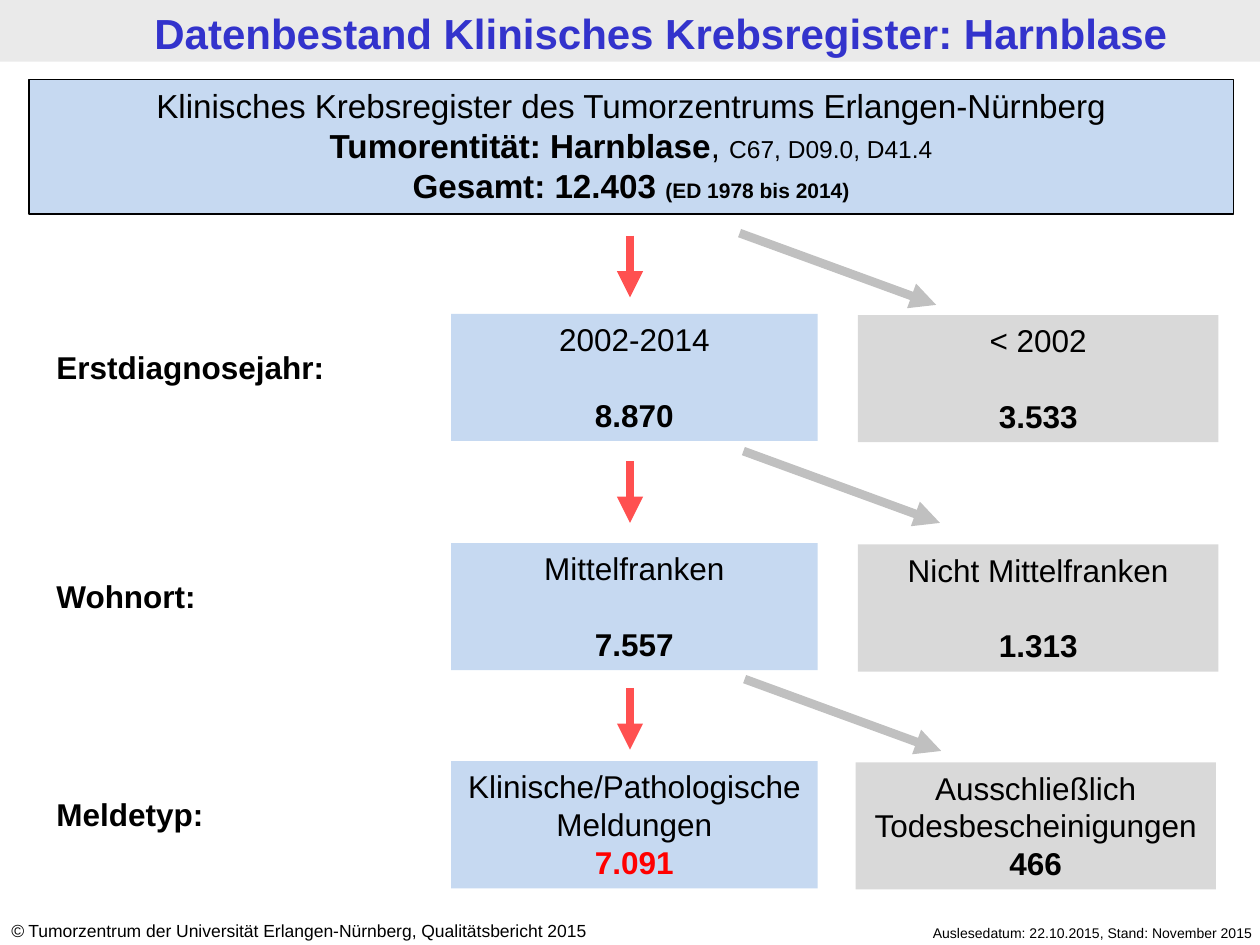
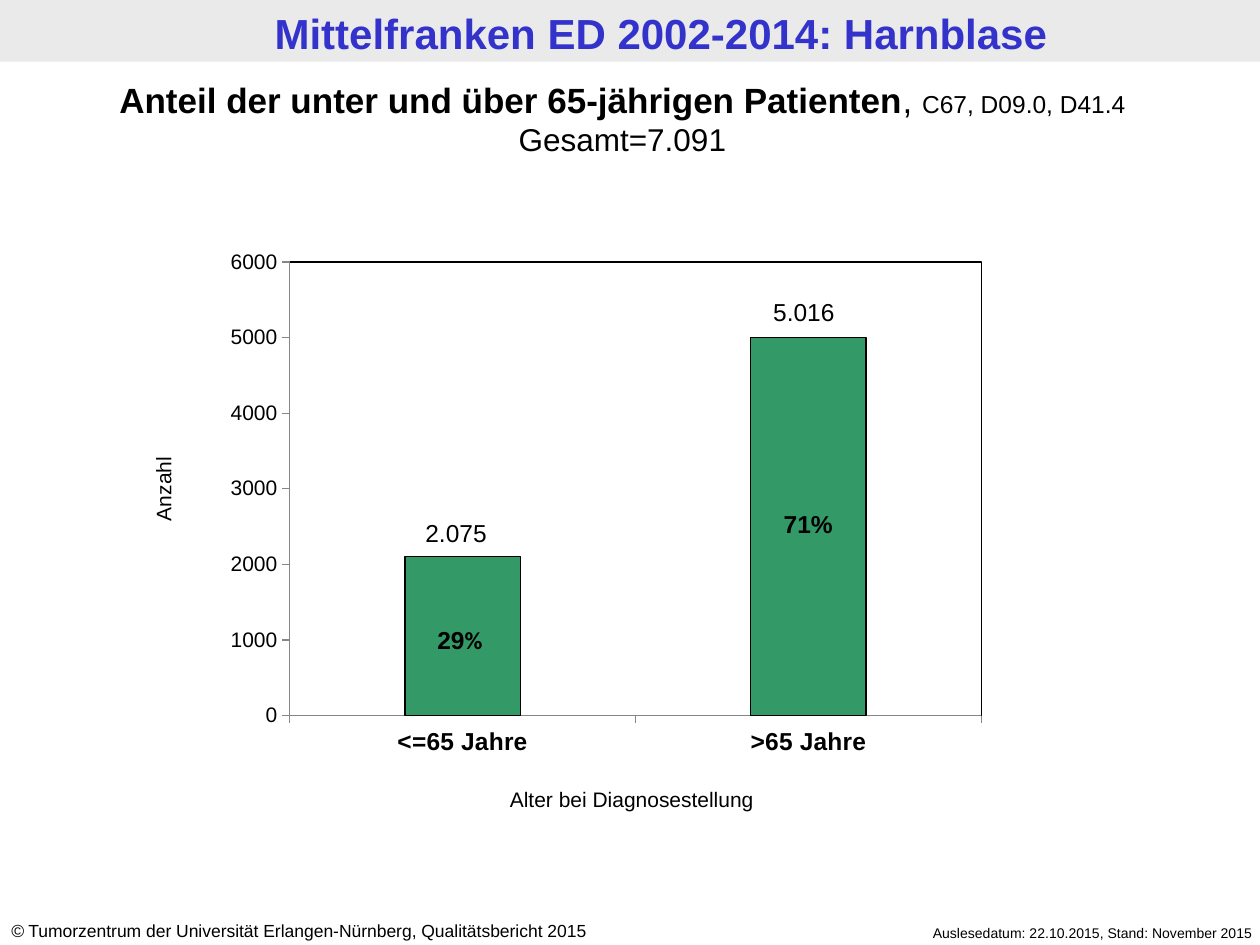
from dataclasses import dataclass

from lxml.etree import SubElement
from pptx import Presentation
from pptx.chart.data import CategoryChartData
from pptx.dml.color import RGBColor
from pptx.enum.chart import XL_CHART_TYPE, XL_TICK_MARK
from pptx.enum.shapes import MSO_CONNECTOR, MSO_SHAPE
from pptx.enum.text import MSO_ANCHOR, PP_ALIGN
from pptx.oxml import parse_xml
from pptx.oxml.ns import nsdecls, qn
from pptx.util import Inches, Pt


@dataclass(frozen=True)
class Theme:
    font: str = "Arial"
    ink: str = "000000"
    title: str = "3333CC"
    band: str = "EAEAEA"
    blue: str = "C6D9F1"
    grey: str = "D9D9D9"
    red: str = "FF0000"
    down: str = "FF5050"
    side: str = "C0C0C0"
    green: str = "339966"
    axis: str = "868686"
    head: int = 24
    lead: int = 20
    sub: int = 19
    body: int = 18
    code: int = 14
    note: int = 12
    foot: int = 10
    date: int = 8
    gap: float = 21.7


T = Theme()
LEFT, MID, RIGHT = PP_ALIGN.LEFT, PP_ALIGN.CENTER, PP_ALIGN.RIGHT
CODES = "C67, D09.0, D41.4"


# Text: a line is a list of runs
def run(text, size=T.body, bold=False, color=T.ink, font=T.font, slant=False):
    return text, size, bold, color, font, slant


def write(frame, lines, align=MID, gap=0):
    frame.word_wrap = True
    frame.vertical_anchor = MSO_ANCHOR.TOP
    for i, line in enumerate(lines):
        para = frame.add_paragraph() if i else frame.paragraphs[0]
        para.alignment = align
        if i and gap:
            para.space_before = Pt(gap)
        for text, size, bold, color, font, slant in line:
            part = para.add_run()
            part.text = text
            part.font.size = Pt(size)
            part.font.bold = bold
            part.font.italic = slant
            part.font.name = font
            part.font.color.rgb = RGBColor.from_string(color)


# Element kinds
def label(slide, at, lines, align=MID, turn=0):
    box = slide.shapes.add_textbox(*map(Inches, at))
    box.rotation = turn
    write(box.text_frame, lines, align)


def block(slide, at, fill, lines=(), gap=0, edge=False):
    box = slide.shapes.add_shape(MSO_SHAPE.RECTANGLE, *map(Inches, at))
    box.shadow.inherit = False
    box.fill.solid()
    box.fill.fore_color.rgb = RGBColor.from_string(fill)
    if edge:
        rule(box.line, T.ink)
    else:
        box.line.fill.background()
    write(box.text_frame, lines, gap=gap)


def rule(line, color, width=0.75):
    line.color.rgb = RGBColor.from_string(color)
    line.width = Pt(width)


def arrow(slide, start, end, color):
    link = slide.shapes.add_connector(
        MSO_CONNECTOR.STRAIGHT, *map(Inches, (*start, *end)))
    rule(link.line, color, 5)
    SubElement(link.line._get_or_add_ln(), qn("a:tailEnd"), type="triangle")
    SubElement(link._element.spPr, qn("a:effectLst"))


def style(axis, size, bold=False):
    axis.has_major_gridlines = False
    axis.major_tick_mark = XL_TICK_MARK.OUTSIDE
    axis.minor_tick_mark = XL_TICK_MARK.NONE
    rule(axis.format.line, T.axis)
    font = axis.tick_labels.font
    font.size, font.bold, font.name = Pt(size), bold, T.font
    font.color.rgb = RGBColor.from_string(T.ink)


def place(chart, size, inner):
    """Fix the inner plot area, given in inches, and outline it."""
    wide, high = size
    x, y, w, h = inner
    area = chart._chartSpace.chart.plotArea
    for old in area.findall(qn("c:layout")):
        area.remove(old)
    spots = "".join(f'<c:{tag} val="{val}"/>' for tag, val in (
        ("layoutTarget", "inner"), ("xMode", "edge"), ("yMode", "edge"),
        ("x", x / wide), ("y", y / high), ("w", w / wide), ("h", h / high)))
    area.insert(0, parse_xml(
        f'<c:layout {nsdecls("c")}><c:manualLayout>{spots}'
        '</c:manualLayout></c:layout>'))
    area.append(parse_xml(
        f'<c:spPr {nsdecls("c", "a")}><a:noFill/><a:ln w="9525"><a:solidFill>'
        f'<a:srgbClr val="{T.ink}"/></a:solidFill></a:ln></c:spPr>'))


def columns(slide, at, names, counts):
    data = CategoryChartData()
    data.categories = names
    data.add_series("Anzahl", counts)
    chart = slide.shapes.add_chart(
        XL_CHART_TYPE.COLUMN_STACKED, *map(Inches, at), data).chart
    chart.has_legend = chart.has_title = False
    chart.font.name, chart.font.size = T.font, Pt(T.body)
    style(chart.category_axis, T.code, True)
    scale = chart.value_axis
    style(scale, T.note)
    scale.minimum_scale, scale.maximum_scale, scale.major_unit = 0, 6000, 1000
    plot = chart.plots[0]
    plot.gap_width, plot.overlap, plot.vary_by_categories = 200, 100, False
    bars = plot.series[0].format
    bars.fill.solid()
    bars.fill.fore_color.rgb = RGBColor.from_string(T.green)
    rule(bars.line, T.ink)
    place(chart, at[2:], (0.79, 0.66, 5.49, 3.6))


# Band, title and footers shared by all slides
def page(deck, title):
    slide = deck.slides.add_slide(deck.slide_layouts[6])
    block(slide, (0, 0, 10, 0.49), T.band)
    label(slide, (0.49, 0.01, 9.51, 0.49),
          [[run(title, T.head, True, T.title)]])
    label(slide, (6.65, 7.29, 3.39, 0.24),
          [[run("Auslesedatum: 22.10.2015, Stand: November 2015", T.date)]],
          RIGHT)
    label(slide, (-0.01, 7.25, 5.24, 0.27),
          [[run("©", T.foot, slant=True),
            run(" Tumorzentrum der Universität Erlangen-Nürnberg, "
                "Qualitätsbericht 2015", T.foot)]], LEFT)
    return slide


# One step of the flow: label, kept cases, dropped cases, two arrows
def step(slide, name, top, stem, fork, kept, out, left=6.81, hue=T.ink, gap=0):
    block(slide, (3.58, top, 2.91, 1.01), T.blue,
          [[run(kept[0])], [run(kept[1], bold=True, color=hue)]], gap)
    block(slide, (left, top + 0.01, 2.86, 1.01), T.grey,
          [[run(out[0])], [run(out[1], bold=True)]], gap)
    label(slide, (0.35, top + 0.22, 2.76, 0.4), [[run(name, bold=True)]], LEFT)
    arrow(slide, (5, stem), (5, stem + 0.49), T.down)
    x, y = fork
    arrow(slide, (x, y), (x + 1.56, y + 0.57), T.side)


def flow(deck):
    slide = page(deck, "Datenbestand Klinisches Krebsregister: Harnblase")
    block(slide, (0.23, 0.63, 9.56, 1.07), T.blue, [
        [run("Klinisches Krebsregister des Tumorzentrums Erlangen-Nürnberg",
             T.sub)],
        [run("Tumorentität: Harnblase", T.sub, True), run(", ", T.sub),
         run(CODES, T.code)],
        [run("Gesamt: 12.403 ", T.sub, True),
         run("(ED 1978 bis 2014)", T.note, True)],
    ], edge=True)
    step(slide, "Erstdiagnosejahr:", 2.49, 1.87, (5.87, 1.85),
         ("2002-2014", "8.870"), ("< 2002", "3.533"), gap=T.gap)
    step(slide, "Wohnort:", 4.31, 3.66, (5.9, 3.58),
         ("Mittelfranken", "7.557"), ("Nicht Mittelfranken", "1.313"),
         gap=T.gap)
    step(slide, "Meldetyp:", 6.04, 5.46, (5.91, 5.39),
         ("Klinische/Pathologische Meldungen", "7.091"),
         ("Ausschließlich Todesbescheinigungen", "466"), 6.79, T.red)


def ages(deck):
    slide = page(deck, "Mittelfranken ED 2002-2014: Harnblase")
    columns(slide, (1.51, 1.42, 6.98, 4.66),
            ("<=65 Jahre", ">65 Jahre"), (2100, 5000))
    label(slide, (0, 0.57, 9.88, 0.74), [
        [run("Anteil der unter und über 65-jährigen Patienten", T.lead, True),
         run(", ", T.lead), run(CODES, T.code)],
        [run("Gesamt=7.091")]])
    # Shares, axis names and counts
    label(slide, (3.16, 4.91, 0.98, 0.34),
          [[run("29", T.code, True), run("%", T.code, True, font="Calibri")]])
    label(slide, (5.94, 3.99, 0.95, 0.34), [[run("71%", T.code, True)]])
    label(slide, (3.35, 6.19, 3.33, 0.3),
          [[run("Alter bei Diagnosestellung", T.note)]])
    label(slide, (-0.01, 3.73, 2.61, 0.3), [[run("Anzahl", T.note)]], turn=270)
    label(slide, (3.11, 4.06, 1.02, 0.34), [[run("2.075", T.code)]])
    label(slide, (5.87, 2.31, 1.02, 0.34), [[run("5.016", T.code)]])


def main():
    deck = Presentation()
    deck.slide_width, deck.slide_height = Inches(10), Inches(7.5)
    flow(deck)
    ages(deck)
    deck.save("out.pptx")


if __name__ == "__main__":
    main()
